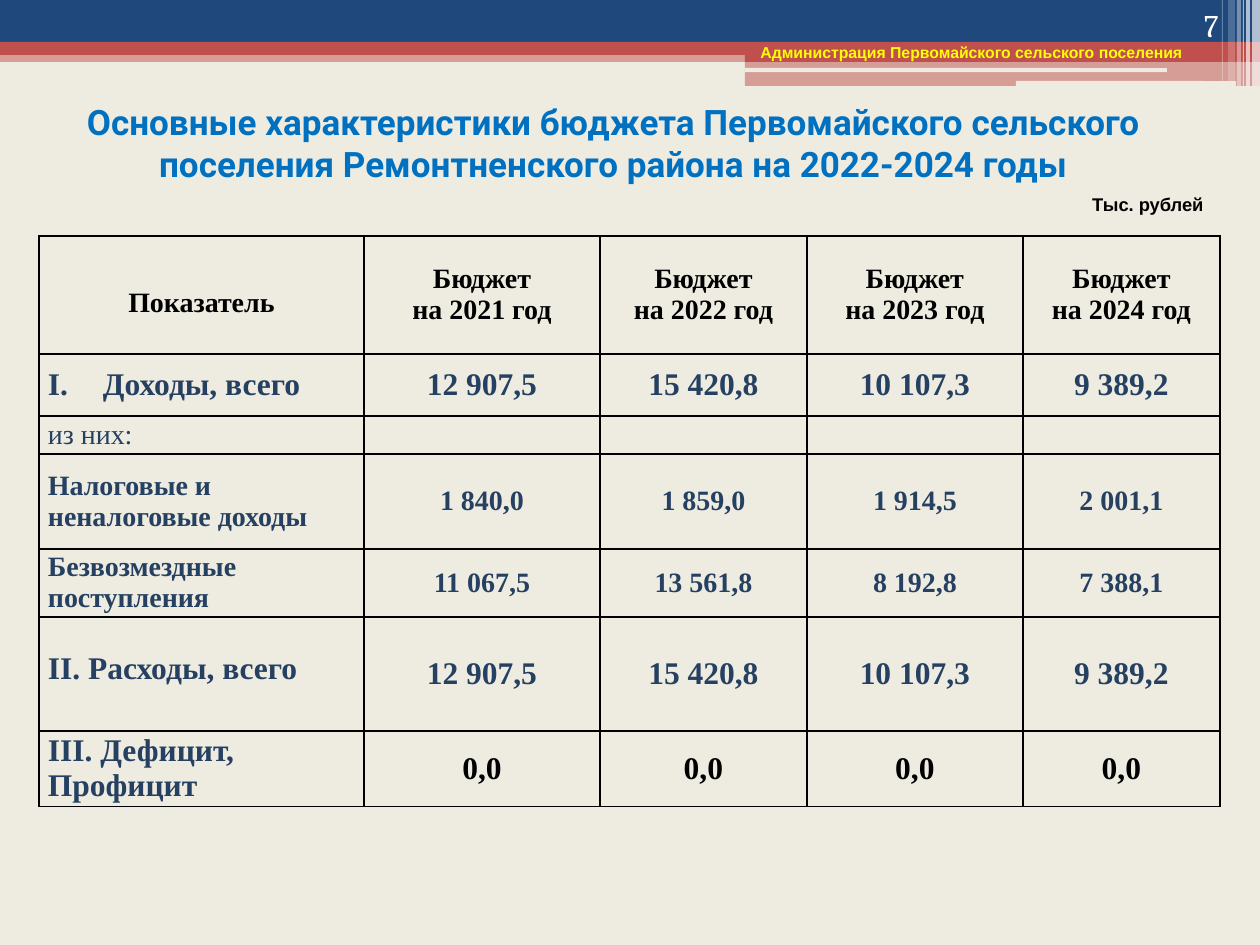
from dataclasses import dataclass

import lxml.etree
import pptx
import pptx.dml.color
import pptx.enum.shapes
import pptx.enum.text
import pptx.oxml
import pptx.oxml.ns
import pptx.util

RGB = pptx.dml.color.RGBColor
ALIGN = pptx.enum.text.PP_ALIGN
ANCHOR = pptx.enum.text.MSO_ANCHOR
KIND = pptx.enum.shapes.MSO_SHAPE

CREAM = RGB(0xEE, 0xEC, 0xE1)
NAVY = RGB(0x1F, 0x49, 0x7D)
RED = RGB(0xC0, 0x50, 0x4D)
WHITE = RGB(0xFF, 0xFF, 0xFF)
BLACK = RGB(0, 0, 0)
BLUE = RGB(0x00, 0x70, 0xC0)
YELLOW = RGB(0xFF, 0xFF, 0x00)
SLATE = RGB(0x25, 0x40, 0x61)

SERIF = "Times New Roman"
SCALE = 914400 / 126


@dataclass
class Bar:
    left: int
    top: int
    width: int
    height: int
    color: RGB
    alpha: int = 100
    kind: KIND = KIND.RECTANGLE


@dataclass
class Row:
    height: int
    label: str
    cells: list[str]
    size: int = 16
    bold: bool = True
    color: RGB = SLATE
    tint: RGB = SLATE


BARS = [
    Bar(0, 50, 1260, 12, RED, 50),
    Bar(0, 0, 1260, 42, NAVY),
    Bar(0, 42, 1260, 13, RED),
    Bar(745, 49, 515, 13, RED),
    Bar(745, 61, 515, 25, RED, 50),
    Bar(745, 68, 422, 4, CREAM, kind=KIND.ROUNDED_RECTANGLE),
    Bar(1016, 81, 220, 5, CREAM, kind=KIND.ROUNDED_RECTANGLE),
    Bar(1252, 0, 8, 86, WHITE, 65),
    Bar(1246, 0, 4, 86, WHITE, 65),
    Bar(1243, 0, 1, 86, WHITE, 60),
    Bar(1237, 0, 4, 86, WHITE, 40),
    Bar(1228, 0, 7, 81, WHITE, 20),
    Bar(1222, 0, 1, 81, WHITE, 30),
]

TOTALS = ["12 907,5", "15 420,8", "10 107,3", "9 389,2"]
WIDTHS = [325, 236, 207, 216, 197]
ROWS = [
    Row(118, "Показатель", [f"Бюджет\nна {year} год" for year in range(2021, 2025)],
        color=BLACK, tint=BLACK),
    Row(62, "Доходы, всего", TOTALS, size=18),
    Row(38, "из них:", [""] * 4, bold=False),
    Row(95, "Налоговые и неналоговые доходы",
        ["1 840,0", "1 859,0", "1 914,5", "2 001,1"]),
    Row(68, "Безвозмездные поступления",
        ["11 067,5", "13 561,8", "8 192,8", "7 388,1"]),
    Row(114, "II. Расходы, всего", TOTALS, size=18),
    Row(75, "III. Дефицит, Профицит", ["0,0"] * 4, size=18, tint=BLACK),
]


def px(count: int) -> int:
    return round(count * SCALE)


def write(frame, text: str, *, size: float, font: str, color: RGB,
          bold: bool = True, align: ALIGN = ALIGN.LEFT, space: float = 1.0) -> None:
    for index, line in enumerate(text.split("\n")):
        para = frame.paragraphs[0] if index == 0 else frame.add_paragraph()
        para.alignment = align
        para.line_spacing = space
        if not line:
            continue
        run = para.add_run()
        run.text = line
        run.font.size = pptx.util.Pt(size)
        run.font.name = font
        run.font.bold = bold
        run.font.color.rgb = color


def box(slide, left: int, top: int, width: int, height: int, text: str,
        anchor: ANCHOR = ANCHOR.TOP, **style) -> None:
    frame = slide.shapes.add_textbox(px(left), px(top), px(width), px(height)).text_frame
    frame.word_wrap = True
    frame.vertical_anchor = anchor
    write(frame, text, **style)


def draw(slide, bar: Bar) -> None:
    shape = slide.shapes.add_shape(
        bar.kind, px(bar.left), px(bar.top), px(bar.width), px(bar.height))
    shape.shadow.inherit = False
    shape.line.fill.background()
    shape.fill.solid()
    shape.fill.fore_color.rgb = bar.color
    if bar.alpha < 100:
        tone = shape.fill._xPr.find(".//" + pptx.oxml.ns.qn("a:srgbClr"))
        lxml.etree.SubElement(
            tone, pptx.oxml.ns.qn("a:alpha"), val=str(bar.alpha * 1000))


def edge(cell) -> None:
    cell.fill.background()
    props = cell._tc.get_or_add_tcPr()
    for index, side in enumerate("LRTB"):
        props.insert(index, pptx.oxml.parse_xml(
            f'<a:ln{side} {pptx.oxml.ns.nsdecls("a")} w="12700">'
            f'<a:solidFill><a:srgbClr val="{BLACK}"/></a:solidFill></a:ln{side}>'))


def number(para, indent: int) -> None:
    props = para._p.get_or_add_pPr()
    props.set("marL", str(px(indent)))
    props.set("indent", str(-px(indent)))
    lxml.etree.SubElement(
        props, pptx.oxml.ns.qn("a:buFont"), typeface="+mj-lt")
    lxml.etree.SubElement(
        props, pptx.oxml.ns.qn("a:buAutoNum"), type="romanUcPeriod")


def grid(slide) -> None:
    height = sum(row.height for row in ROWS)
    table = slide.shapes.add_table(
        len(ROWS), len(WIDTHS), px(39), px(236), px(sum(WIDTHS)), px(height)).table
    table.first_row = table.horz_banding = False
    for col, width in zip(table.columns, WIDTHS):
        col.width = px(width)
    for y, row in enumerate(ROWS):
        table.rows[y].height = px(row.height)
        for x, text in enumerate([row.label, *row.cells]):
            cell = table.cell(y, x)
            edge(cell)
            cell.margin_left = cell.margin_right = px(9)
            cell.margin_top = cell.margin_bottom = 0
            cell.vertical_anchor = ANCHOR.MIDDLE
            write(cell.text_frame, text, size=row.size, font=SERIF, bold=row.bold,
                  color=row.tint if x else row.color,
                  align=ALIGN.CENTER if x or y == 0 else ALIGN.LEFT,
                  space=1.5 if x == y == 0 else 1.0)
    number(table.cell(1, 0).text_frame.paragraphs[0], 55)
    costs = table.cell(5, 0)
    costs.vertical_anchor = ANCHOR.TOP
    costs.margin_top = px(35)


def main() -> None:
    deck = pptx.Presentation()
    deck.slide_width, deck.slide_height = px(1260), px(945)
    slide = deck.slides.add_slide(deck.slide_layouts[6])
    slide.background.fill.solid()
    slide.background.fill.fore_color.rgb = CREAM
    for bar in BARS:
        draw(slide, bar)
    box(slide, 29, 96, 1169, 92,
        "Основные характеристики бюджета Первомайского сельского поселения "
        "Ремонтненского района на 2022-2024 годы",
        ANCHOR.MIDDLE, size=20, font="Roboto", color=BLUE, align=ALIGN.CENTER)
    box(slide, 748, 37, 457, 32, "Администрация Первомайского сельского поселения",
        size=9, font="Arial", color=YELLOW)
    grid(slide)
    box(slide, 1037, 187, 179, 35, "Тыс. рублей",
        size=10.5, font="Arial", color=BLACK, align=ALIGN.RIGHT)
    box(slide, 1126, 0, 105, 50, "7", ANCHOR.BOTTOM,
        size=18, font="Cambria", color=WHITE, bold=False, align=ALIGN.RIGHT)
    deck.save("out.pptx")


if __name__ == "__main__":
    main()
